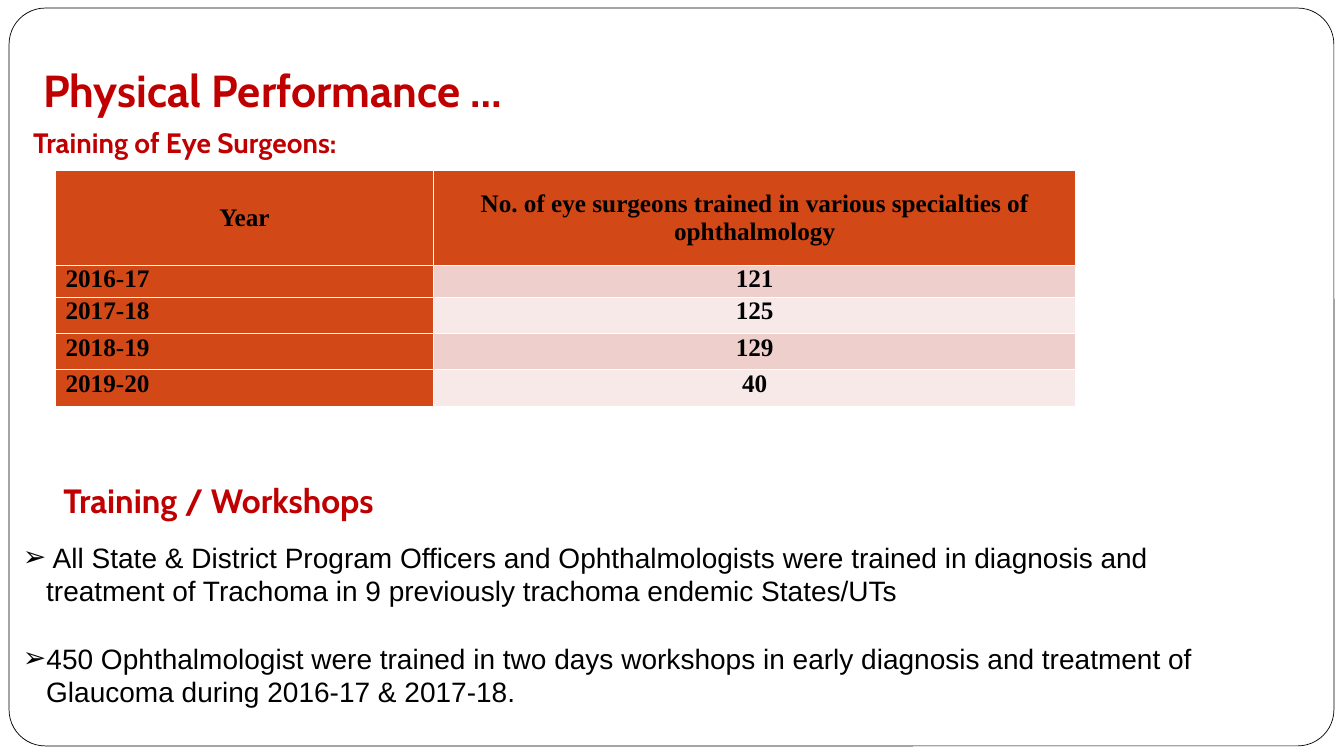
import pptx
import pptx.util
import pptx.dml.color
import pptx.enum.shapes
import pptx.enum.text
import pptx.oxml
import pptx.oxml.ns

Inches = pptx.util.Inches
Pt = pptx.util.Pt
ALIGN = pptx.enum.text.PP_ALIGN
ANCHOR = pptx.enum.text.MSO_ANCHOR
DRAWING = pptx.oxml.ns.nsdecls("a")


def color(value):
    return pptx.dml.color.RGBColor.from_string(value)


def write(para, text, name, size, shade, bold=True):
    span = para.add_run()
    span.text = text
    values = {"name": name, "size": Pt(size), "bold": bold}
    for key, value in values.items():
        setattr(span.font, key, value)
    span.font.color.rgb = color(shade)


deck = pptx.Presentation()
deck.slide_width = Inches(13.33)
deck.slide_height = Inches(7.5)
page = deck.slides.add_slide(deck.slide_layouts[5])

# Rounded frame behind everything
frame = page.shapes.add_shape(
    pptx.enum.shapes.MSO_SHAPE.ROUNDED_RECTANGLE,
    Inches(0.09), Inches(0.08), Inches(13.14), Inches(7.32))
frame.adjustments[0] = 0.049
frame.shadow.inherit = False
frame.fill.solid()
frame.fill.fore_color.rgb = color("FFFFFF")
frame.line.color.rgb = color("000000")
frame.line.width = Pt(0.5)
page.shapes._spTree.insert(2, frame._element)

# Title and the two section headings
title = page.shapes.title
training = page.shapes.add_textbox(0, 0, 0, 0)
workshops = page.shapes.add_textbox(0, 0, 0, 0)
headings = [
    (title, "Physical Performance …", 32, ANCHOR.BOTTOM, 0.1, (0.33, 0.08, 12.44, 1.18)),
    (training, "Training of Eye Surgeons:", 20, ANCHOR.MIDDLE, 0.05, (0.23, 1.19, 8.33, 0.44)),
    (workshops, "Training / Workshops", 24, ANCHOR.TOP, 0.05, (0.53, 4.71, 3.7, 0.51)),
]
for box, text, size, anchor, bottom, place in headings:
    for key, value in zip(("left", "top", "width", "height"), place):
        setattr(box, key, Inches(value))
    values = {"word_wrap": True, "vertical_anchor": anchor,
              "auto_size": pptx.enum.text.MSO_AUTO_SIZE.NONE,
              "margin_bottom": Inches(bottom)}
    for key, value in values.items():
        setattr(box.text_frame, key, value)
    para = box.text_frame.paragraphs[0]
    para.alignment = ALIGN.LEFT
    write(para, text, "Cabin", size, "C00000")

# Table of surgeons trained per year
rows = [
    ("Year", "No. of eye surgeons trained in various specialties of ophthalmology"),
    ("2016-17", "121"),
    ("2017-18", "125"),
    ("2018-19", "129"),
    ("2019-20", "40"),
]
table = page.shapes.add_table(
    len(rows), 2, Inches(0.55), Inches(1.69), Inches(10.12), Inches(2.34)).table
for column, width in zip(table.columns, (3.75, 6.37)):
    column.width = Inches(width)
for row, height in zip(table.rows, (0.94, 0.32, 0.36, 0.36, 0.36)):
    row.height = Inches(height)

for r, texts in enumerate(rows):
    for c, text in enumerate(texts):
        header = r == 0
        cell = table.cell(r, c)
        values = {"margin_left": Inches(0.1), "margin_right": Inches(0.1),
                  "margin_top": 0, "margin_bottom": 0,
                  "vertical_anchor": ANCHOR.MIDDLE if header else ANCHOR.TOP}
        for key, value in values.items():
            setattr(cell, key, value)
        band = "EFCFCC" if r % 2 else "F7E9E8"
        cell.fill.solid()
        cell.fill.fore_color.rgb = color("D34817" if header or c == 0 else band)
        para = cell.text_frame.paragraphs[0]
        para.alignment = ALIGN.CENTER if header or c else ALIGN.LEFT
        write(para, text, "Times New Roman", 18, "000000")
        # White cell borders, thinner around the header
        for i, side in enumerate("LRTB"):
            thin = header or (r == 1 and side == "T")
            border = pptx.oxml.parse_xml(
                f'<a:ln{side} {DRAWING} w="{Pt(0.5 if thin else 1)}"><a:solidFill>'
                f'<a:srgbClr val="FFFFFF"/></a:solidFill></a:ln{side}>')
            cell._tc.get_or_add_tcPr().insert(i, border)

# Bulleted workshop notes
notes = [
    " All State & District Program Officers and Ophthalmologists were trained in "
    "diagnosis and treatment of Trachoma in 9 previously trachoma endemic States/UTs",
    "450 Ophthalmologist were trained in two days workshops in early diagnosis and "
    "treatment of Glaucoma during 2016-17 & 2017-18.",
]
box = page.shapes.add_textbox(Inches(-0.14), Inches(5.31), Inches(12.84), Inches(1.78))
box.text_frame.word_wrap = True
for i, text in enumerate(notes):
    para = box.text_frame.paragraphs[0] if i == 0 else box.text_frame.add_paragraph()
    para.level = 1
    para.line_spacing = Pt(24)
    para.space_before = Pt(24 * i)
    write(para, text, "Arial", 20, "000000", bold=False)
    layout = para._p.get_or_add_pPr()
    layout.set("marL", str(Inches(0.5)))
    layout.set("indent", str(Inches(-0.23)))
    layout.append(pptx.oxml.parse_xml(f'<a:buFont {DRAWING} typeface="Arial"/>'))
    layout.append(pptx.oxml.parse_xml(f'<a:buChar {DRAWING} char="➢"/>'))

deck.save("out.pptx")
